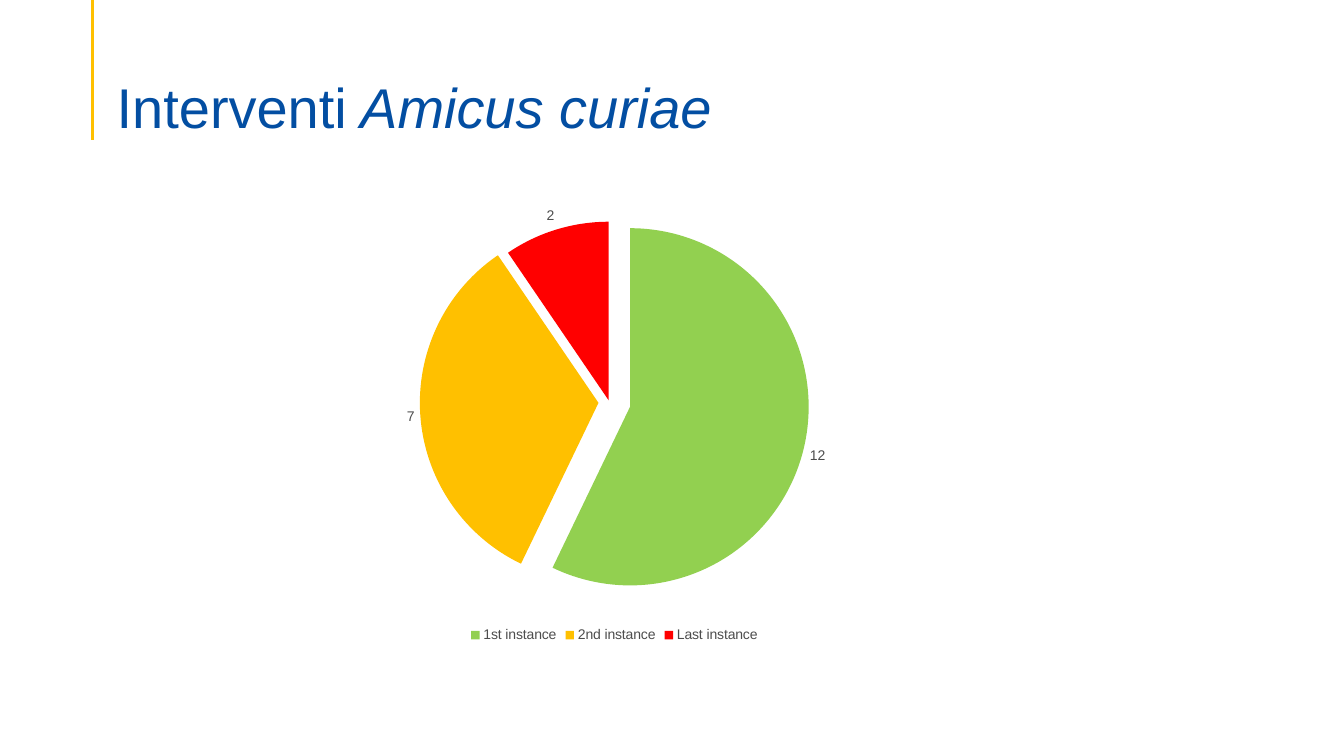
import pptx
import pptx.chart.data
import pptx.dml.color
import pptx.enum.chart
import pptx.enum.shapes
import pptx.enum.text
import pptx.oxml
import pptx.util
from dataclasses import dataclass

Pt = pptx.util.Pt
RGB = pptx.dml.color.RGBColor.from_string


@dataclass(frozen=True)
class Theme:
    font: str = "Arial"
    title_color: str = "034EA2"
    accent: str = "FFC000"
    chart_text: str = "4D4D4D"
    title_size: float = 40
    chart_size: float = 10
    rule_width: float = 2.25


THEME = Theme()

# Category, value, colour, explosion in percent of the radius
INSTANCES = [
    ("1st instance", 12, "92D050", 12),
    ("2nd instance", 7, "FFC000", 6),
    ("Last instance", 2, "FF0000", 1),
]


def add_title(slide, left, top, width, height):
    # Accent rule from the slide's top edge, just left of the title
    rule_x = left - 10
    rule = slide.shapes.add_connector(
        pptx.enum.shapes.MSO_CONNECTOR.STRAIGHT,
        Pt(rule_x), Pt(0), Pt(rule_x), Pt(top + height))
    rule.line.color.rgb = RGB(THEME.accent)
    rule.line.width = Pt(THEME.rule_width)
    rule._element.spPr.append(pptx.oxml.parse_xml(
        '<a:effectLst xmlns:a="http://schemas.openxmlformats.org/drawingml/2006/main"/>'))

    # Title text
    box = slide.shapes.add_textbox(Pt(left), Pt(top), Pt(width), Pt(height))
    frame = box.text_frame
    frame.word_wrap = True
    frame.vertical_anchor = pptx.enum.text.MSO_ANCHOR.BOTTOM
    frame.margin_bottom = 0
    paragraph = frame.paragraphs[0]
    paragraph.line_spacing = 0.9
    paragraph.font.name = THEME.font
    paragraph.font.size = Pt(THEME.title_size)
    paragraph.font.color.rgb = RGB(THEME.title_color)
    paragraph.add_run().text = "Interventi"
    latin = paragraph.add_run()
    latin.text = " Amicus curiae"
    latin.font.italic = True


def add_instance_pie(slide, left, top, width, height):
    data = pptx.chart.data.CategoryChartData()
    data.categories = [name for name, *_ in INSTANCES]
    data.add_series("Series 1", [value for _, value, *_ in INSTANCES])
    chart = slide.shapes.add_chart(
        pptx.enum.chart.XL_CHART_TYPE.PIE,
        Pt(left), Pt(top), Pt(width), Pt(height), data).chart
    chart.has_title = False
    chart.font.name = THEME.font
    chart.font.size = Pt(THEME.chart_size)
    chart.font.color.rgb = RGB(THEME.chart_text)

    # Legend
    chart.has_legend = True
    chart.legend.position = pptx.enum.chart.XL_LEGEND_POSITION.BOTTOM
    chart.legend.include_in_layout = False

    # Value labels
    plot = chart.plots[0]
    plot.vary_by_categories = True
    plot.has_data_labels = True
    plot.data_labels.show_value = True
    plot.data_labels.show_percentage = False
    plot.data_labels.position = pptx.enum.chart.XL_LABEL_POSITION.OUTSIDE_END

    # Slice colours and offsets
    for index, (_, _, color, explosion) in enumerate(INSTANCES):
        point = plot.series[0].points[index]
        point.format.fill.solid()
        point.format.fill.fore_color.rgb = RGB(color)
        point.format.line.fill.background()
        slice_xml = point.format._element
        slice_xml.find(pptx.oxml.ns.qn("c:spPr")).addprevious(pptx.oxml.parse_xml(
            '<c:explosion xmlns:c="http://schemas.openxmlformats.org/drawingml/2006/chart"'
            f' val="{explosion}"/>'))


def main():
    presentation = pptx.Presentation()
    presentation.slide_width = Pt(960)
    presentation.slide_height = Pt(540)
    slide = presentation.slides.add_slide(presentation.slide_layouts[6])
    add_title(slide, 76.3, 38.2, 828, 62)
    add_instance_pie(slide, 162, 128.2, 553.7, 334)
    presentation.save("out.pptx")


if __name__ == "__main__":
    main()
